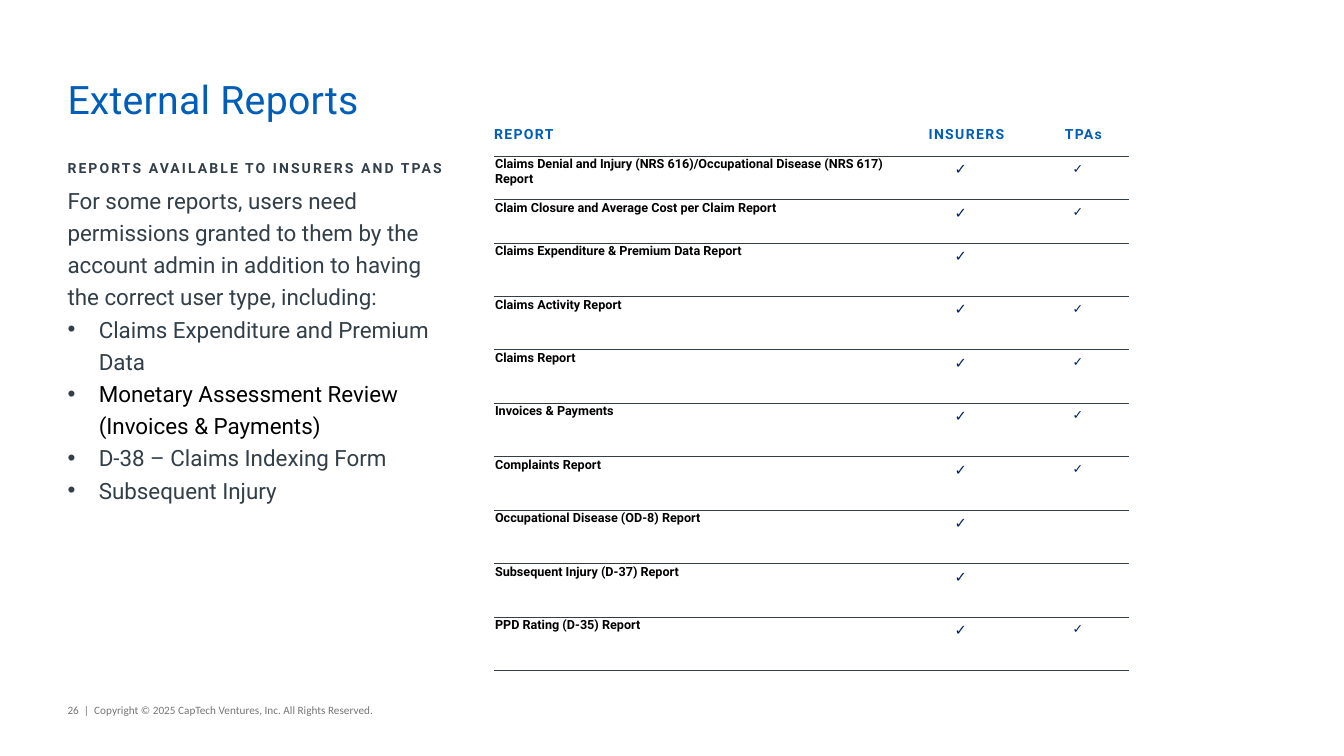
from lxml import etree
from pptx import Presentation
from pptx.dml.color import RGBColor
from pptx.enum import text
from pptx.oxml import ns
from pptx.util import Inches, Pt

BLUE = RGBColor(0x00, 0x5E, 0xB8)
SLATE = RGBColor(0x33, 0x3F, 0x48)
NAVY = RGBColor(0x00, 0x20, 0x60)
GRAY = RGBColor(0x75, 0x75, 0x75)
BLACK = RGBColor(0, 0, 0)
WHITE = RGBColor(0xFF, 0xFF, 0xFF)

TITLE = "External Reports"
SUBTITLE = "REPORTS AVAILABLE TO INSURERS AND TPAS"
FOOTER = "26  |  Copyright © 2025 CapTech Ventures, Inc. All Rights Reserved."
INTRO = ("For some reports, users need permissions granted to them by the account "
         "admin in addition to having the correct user type, including:")
PERMISSIONS = [
    ("Claims Expenditure and Premium Data", SLATE),
    ("Monetary Assessment Review (Invoices & Payments)", BLACK),
    ("D-38 – Claims Indexing Form", SLATE),
    ("Subsequent Injury", SLATE),
]
HEADINGS = ["REPORT", "INSURERS", "TPAs"]
CHECK = "✓"
REPORTS = [  # name, open to insurers, open to TPAs
    ("Claims Denial and Injury (NRS 616)/Occupational Disease (NRS 617) Report", True, True),
    ("Claim Closure and Average Cost per Claim Report", True, True),
    ("Claims Expenditure & Premium Data Report", True, False),
    ("Claims Activity Report", True, True),
    ("Claims Report", True, True),
    ("Invoices & Payments", True, True),
    ("Complaints Report", True, True),
    ("Occupational Disease (OD-8) Report", True, False),
    ("Subsequent Injury (D-37) Report", True, False),
    ("PPD Rating (D-35) Report", True, True),
]
COLUMN_WIDTHS = [3.98, 1.3, 1.02]
ROW_HEIGHTS = [0.43] * 3 + [0.53] * 8

TITLE_FONT = dict(name="Roboto", size=Pt(28))
BODY_FONT = dict(name="Roboto", size=Pt(16))
HEADING_FONT = dict(name="Roboto", size=Pt(10), bold=True)
REPORT_FONT = dict(name="Roboto", size=Pt(9), bold=True)
FOOTER_FONT = dict(name="Calibri", size=Pt(8))
CHECK_FONTS = [dict(name="Roboto Condensed", size=Pt(size), bold=False) for size in (10.5, 9)]
HEADING_MARGINS = [(0, 0.05, 0.11, 0.05)] + [(0.11, 0.05, 0, 0.05)] * 2
REPORT_MARGINS = [(0.01, 0.01, 0.01, 0)] + [(0.1, 0.05, 0.1, 0.05)] * 2


def set_margins(holder, margins):
    for side, value in zip(("left", "top", "right", "bottom"), margins):
        setattr(holder, f"margin_{side}", Inches(value))


def write(para, words, font, color, spacing=0):
    """Add one run; spacing is the letter spacing in points."""
    span = para.add_run()
    span.text = words
    for key, value in font.items():
        setattr(span.font, key, value)
    span.font.color.rgb = color
    if spacing:
        span.font._element.set("spc", str(round(spacing * 100)))


def add_box(page, left, top, width, height, margins=(0, 0, 0, 0)):
    frame = page.shapes.add_textbox(*map(Inches, (left, top, width, height))).text_frame
    frame.word_wrap = True
    set_margins(frame, margins)
    return frame


def add_bullet(para):
    props = para._p.get_or_add_pPr()
    props.set("marL", str(Inches(0.31)))
    props.set("indent", str(-Inches(0.31)))
    color = etree.SubElement(props, ns.qn("a:buClr"))
    etree.SubElement(color, ns.qn("a:srgbClr"), val=str(SLATE))
    etree.SubElement(props, ns.qn("a:buFont"), typeface="Arial")
    etree.SubElement(props, ns.qn("a:buChar"), char="•")


def set_borders(cell, top, bottom):
    """Rule the cell above and below where asked, with open sides."""
    props = cell._tc.get_or_add_tcPr()
    for index, (side, ruled) in enumerate(
            [("L", False), ("R", False), ("T", top), ("B", bottom)]):
        line = etree.Element(ns.qn(f"a:ln{side}"), w=str(Pt(0.5)))
        if ruled:
            fill = etree.SubElement(line, ns.qn("a:solidFill"))
            etree.SubElement(fill, ns.qn("a:srgbClr"), val=str(SLATE))
        else:
            etree.SubElement(line, ns.qn("a:noFill"))
        props.insert(index, line)


def add_body(page):
    frame = add_box(page, 0.67, 1.8, 3.78, 4.68)
    para = frame.paragraphs[0]
    para.line_spacing = 1.2
    write(para, INTRO, BODY_FONT, SLATE)
    for words, color in PERMISSIONS:
        para = frame.add_paragraph()
        para.line_spacing = 1.2
        add_bullet(para)
        write(para, words, BODY_FONT, color)


def add_reports(page):
    table = page.shapes.add_table(
        len(ROW_HEIGHTS), len(COLUMN_WIDTHS), Inches(4.9), Inches(1.12),
        Inches(sum(COLUMN_WIDTHS)), Inches(sum(ROW_HEIGHTS))).table
    table.first_row = table.horz_banding = False
    for column, width in zip(table.columns, COLUMN_WIDTHS):
        column.width = Inches(width)
    for row, height in zip(table.rows, ROW_HEIGHTS):
        row.height = Inches(height)

    rows = [HEADINGS] + [
        [name] + [CHECK if is_open else "" for is_open in access] for name, *access in REPORTS]
    for r, row in enumerate(rows):
        for c, words in enumerate(row):
            cell = table.cell(r, c)
            para = cell.text_frame.paragraphs[0]
            if c:
                para.alignment = text.PP_ALIGN.CENTER
            if r == 0:
                cell.fill.background()
                cell.vertical_anchor = text.MSO_ANCHOR.MIDDLE
                set_margins(cell, HEADING_MARGINS[c])
                write(para, words, HEADING_FONT, BLUE, 1)
            else:
                cell.fill.solid()
                cell.fill.fore_color.rgb = WHITE
                set_margins(cell, REPORT_MARGINS[c])
                if c == 0:
                    write(para, words, REPORT_FONT, BLACK)
                elif words:
                    write(para, words, CHECK_FONTS[c - 1], NAVY)
                else:
                    para.font.size = Pt(9)
            set_borders(cell, top=r > 0, bottom=True)


def main():
    deck = Presentation()
    deck.slide_width, deck.slide_height = Inches(13.33), Inches(7.5)
    page = deck.slides.add_slide(deck.slide_layouts[6])

    footer = add_box(page, 0.67, 6.93, 3.38, 0.24, (0, 0.05, 0.1, 0.05))
    write(footer.paragraphs[0], FOOTER, FOOTER_FONT, GRAY)
    add_body(page)
    title = add_box(page, 0.67, 0.75, 12, 0.47).paragraphs[0]
    title.space_after = Pt(8)
    write(title, TITLE, TITLE_FONT, BLUE, 0.2)
    subtitle = add_box(page, 0.67, 1.47, 6.66, 0.31).paragraphs[0]
    subtitle.line_spacing = Pt(20)
    subtitle.space_after = Pt(6)
    write(subtitle, SUBTITLE, HEADING_FONT, SLATE, 1.5)
    add_reports(page)

    deck.save("out.pptx")


if __name__ == "__main__":
    main()
